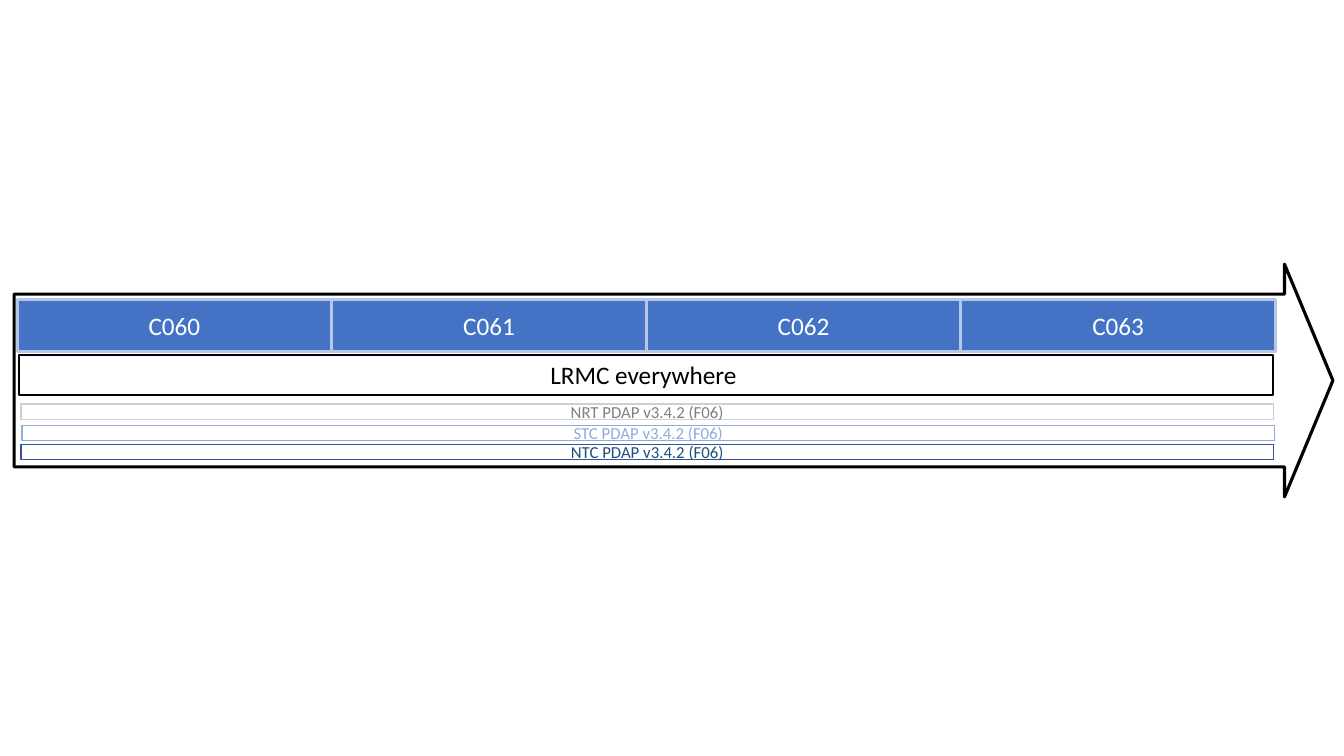
from dataclasses import dataclass
from typing import Optional

from pptx import Presentation
from pptx.dml.color import RGBColor
from pptx.enum.shapes import MSO_SHAPE
from pptx.enum.text import MSO_ANCHOR, MSO_AUTO_SIZE, PP_ALIGN
from pptx.shapes.autoshape import Shape
from pptx.slide import Slide
from pptx.util import Inches, Pt

WHITE = RGBColor(0xFF, 0xFF, 0xFF)
BLACK = RGBColor(0x00, 0x00, 0x00)
BLUE = RGBColor(0x44, 0x72, 0xC4)
PALE_BLUE = RGBColor(0xB4, 0xC7, 0xE7)
SOFT_BLUE = RGBColor(0x8F, 0xAA, 0xDC)
DEEP_BLUE = RGBColor(0x2F, 0x55, 0x97)
NAVY = RGBColor(0x1F, 0x4E, 0x79)
GRAY = RGBColor(0x80, 0x80, 0x80)
LIGHT_GRAY = RGBColor(0xD0, 0xCE, 0xCE)

FONT = "Calibri"
CYCLES = ("C060", "C061", "C062", "C063")
CYCLE_LEFT = 0.17
CYCLE_WIDTH = 3.12


@dataclass(frozen=True)
class Bar:
    text: str
    left: float
    top: float
    width: float
    height: float
    fill: Optional[RGBColor]
    line: RGBColor
    line_width: float
    text_color: RGBColor
    text_size: int


CYCLE_BARS = [
    Bar(name, CYCLE_LEFT + index * CYCLE_WIDTH, 2.97, CYCLE_WIDTH, 0.52,
        BLUE, PALE_BLUE, 2.25, WHITE, 18)
    for index, name in enumerate(CYCLES)
]
MODE_BAR = Bar("LRMC everywhere ", 0.19, 3.52, 12.44, 0.4, WHITE, BLACK, 1.5, BLACK, 18)
VERSION_BARS = [
    Bar("NRT PDAP v3.4.2 (F06)", 0.21, 4.01, 12.42, 0.15, WHITE, LIGHT_GRAY, 1, GRAY, 12),
    Bar("STC PDAP v3.4.2 (F06)", 0.22, 4.22, 12.42, 0.15, None, SOFT_BLUE, 1, SOFT_BLUE, 12),
    Bar("NTC PDAP v3.4.2 (F06)", 0.21, 4.41, 12.42, 0.15, WHITE, DEEP_BLUE, 1, NAVY, 12),
]


def style_shape(shape: Shape, fill: Optional[RGBColor], line: RGBColor, line_width: float) -> None:
    shape.shadow.inherit = False
    if fill is None:
        shape.fill.background()
    else:
        shape.fill.solid()
        shape.fill.fore_color.rgb = fill
    shape.line.color.rgb = line
    shape.line.width = Pt(line_width)


def add_timeline_arrow(slide: Slide) -> None:
    arrow = slide.shapes.add_shape(
        MSO_SHAPE.RIGHT_ARROW, Inches(0.14), Inches(2.62), Inches(13.08), Inches(2.31)
    )
    arrow.adjustments[0] = 0.742
    arrow.adjustments[1] = 0.208
    style_shape(arrow, WHITE, BLACK, 2.25)


def add_bar(slide: Slide, bar: Bar) -> Shape:
    shape = slide.shapes.add_shape(
        MSO_SHAPE.RECTANGLE,
        Inches(bar.left), Inches(bar.top), Inches(bar.width), Inches(bar.height),
    )
    style_shape(shape, bar.fill, bar.line, bar.line_width)
    text_frame = shape.text_frame
    text_frame.text = bar.text
    text_frame.word_wrap = True
    text_frame.vertical_anchor = MSO_ANCHOR.MIDDLE
    paragraph = text_frame.paragraphs[0]
    paragraph.alignment = PP_ALIGN.CENTER
    font = paragraph.runs[0].font
    font.name = FONT
    font.size = Pt(bar.text_size)
    font.color.rgb = bar.text_color
    return shape


def main() -> None:
    presentation = Presentation()
    presentation.slide_width = Inches(13.33)
    presentation.slide_height = Inches(7.5)
    slide = presentation.slides.add_slide(presentation.slide_layouts[6])

    add_timeline_arrow(slide)
    for bar in CYCLE_BARS + VERSION_BARS:
        add_bar(slide, bar)
    mode_frame = add_bar(slide, MODE_BAR).text_frame
    mode_frame.vertical_anchor = MSO_ANCHOR.TOP
    mode_frame.auto_size = MSO_AUTO_SIZE.SHAPE_TO_FIT_TEXT

    presentation.save("out.pptx")


if __name__ == "__main__":
    main()
